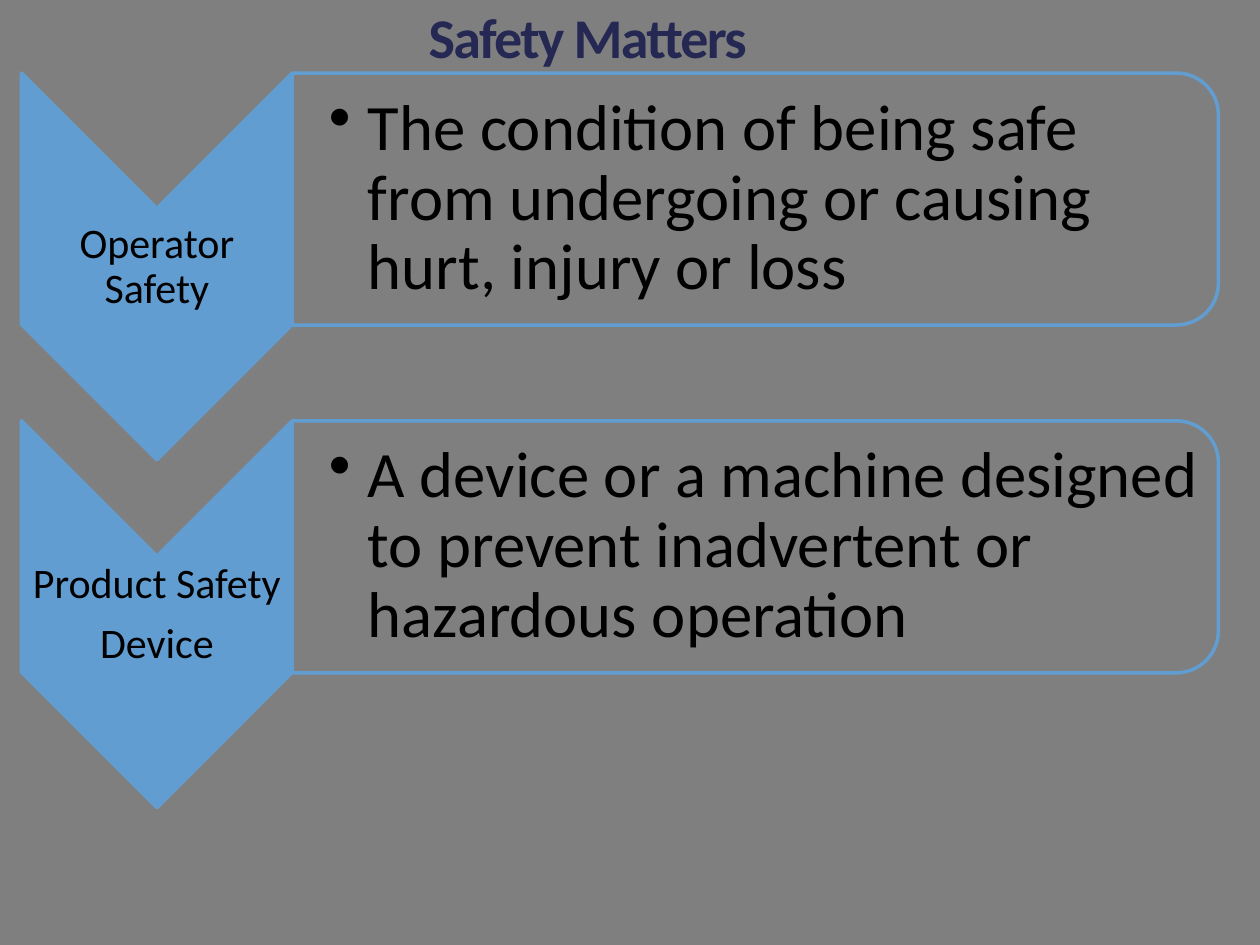
from dataclasses import dataclass

from lxml import etree
from pptx import Presentation
from pptx.dml.color import RGBColor
from pptx.enum.shapes import MSO_SHAPE
from pptx.enum.text import MSO_ANCHOR, PP_ALIGN
from pptx.oxml.ns import qn
from pptx.util import Inches, Pt

CHEVRON = MSO_SHAPE.CHEVRON
ROUNDED_PANEL = MSO_SHAPE.ROUND_2_SAME_RECTANGLE
MIDDLE = MSO_ANCHOR.MIDDLE
LEFT, CENTER = PP_ALIGN.LEFT, PP_ALIGN.CENTER


@dataclass(frozen=True)
class Theme:
    font: str = "Calibri"
    background: RGBColor = RGBColor(0x7F, 0x7F, 0x7F)
    accent: RGBColor = RGBColor(0x62, 0x9D, 0xD1)
    heading: RGBColor = RGBColor(0x24, 0x28, 0x52)
    body: RGBColor = RGBColor(0, 0, 0)
    title_size: int = 32
    label_size: int = 24
    detail_size: int = 37


THEME = Theme()
FIRST_TOP, ROW_PITCH = 0.58, 2.76
ROWS = [
    (["Operator Safety"],
     "The condition of being safe from undergoing or causing hurt, injury or loss"),
    (["Product Safety", "Device"],
     "A device or a machine designed to prevent inadvertent or hazardous operation"),
]


def apply_format(target, values):
    for name, value in values.items():
        setattr(target, name, value)


def add_text(page, bounds, lines, size, color, inset=0.0, left_inset=None,
             align=CENTER, bold=False, bullet=False, spacing=1.0, after=0.0):
    box = page.shapes.add_textbox(*map(Inches, bounds))
    frame = box.text_frame
    apply_format(frame, {
        "word_wrap": True,
        "vertical_anchor": MIDDLE,
        "margin_left": Inches(inset if left_inset is None else left_inset),
        "margin_right": Inches(inset),
        "margin_top": Inches(inset),
        "margin_bottom": Inches(inset),
    })
    for index, line in enumerate(lines):
        para = frame.paragraphs[0] if index == 0 else frame.add_paragraph()
        apply_format(para, {"alignment": align, "line_spacing": spacing,
                            "space_after": Pt(size * after)})
        if bullet:
            add_bullet(para)
        span = para.add_run()
        span.text = line
        apply_format(span.font, {"name": THEME.font, "size": Pt(size), "bold": bold})
        span.font.color.rgb = color
    return box


def add_bullet(para):
    para.level = 1
    properties = para._p.get_or_add_pPr()
    properties.set("marL", str(Inches(0.31)))
    properties.set("indent", str(-Inches(0.31)))
    etree.SubElement(properties, qn("a:buChar"), char="•")


def add_turned_shape(page, kind, bounds, fill):
    left, top, width, height = bounds
    shift = (width - height) / 2
    shape = page.shapes.add_shape(
        kind, *map(Inches, (left + shift, top - shift, height, width)))
    shape.rotation = 90
    shape.shadow.inherit = False
    shape.fill.solid()
    shape.fill.fore_color.rgb = fill
    shape.line.color.rgb = THEME.accent
    shape.line.width = Pt(2)
    return shape


def set_opacity(shape, percent):
    color = shape.fill._xPr.find(qn("a:solidFill"))[0]
    etree.SubElement(color, qn("a:alpha"), val=str(percent * 1000))


def add_title(page):
    box = add_text(page, (0.5, 0, 8.33, 0.58), ["Safety Matters"],
                   THEME.title_size, THEME.heading, bold=True)
    span = box.text_frame.paragraphs[0].runs[0]
    span.font._element.set("spc", "-100")


def add_row(page, top, label, detail):
    add_turned_shape(page, CHEVRON, (0.17, top, 2.15, 3.07), THEME.accent)
    add_text(page, (0.17, top + 1.08, 2.15, 0.92), label, THEME.label_size,
             THEME.body, inset=0.02, spacing=0.9, after=0.35)
    panel = add_turned_shape(page, ROUNDED_PANEL, (2.32, top, 7.35, 2),
                             THEME.background)
    set_opacity(panel, 90)
    add_text(page, (2.32, top + 0.1, 7.25, 1.8), [detail], THEME.detail_size,
             THEME.body, inset=0.03, left_inset=0.29, align=LEFT, bullet=True,
             spacing=0.9, after=0.15)


def main():
    deck = Presentation()
    deck.slide_width, deck.slide_height = Inches(10), Inches(7.5)
    page = deck.slides.add_slide(deck.slide_layouts[6])
    page.background.fill.solid()
    page.background.fill.fore_color.rgb = THEME.background
    add_title(page)
    for index, (label, detail) in enumerate(ROWS):
        add_row(page, FIRST_TOP + index * ROW_PITCH, label, detail)
    deck.save("out.pptx")


if __name__ == "__main__":
    main()
